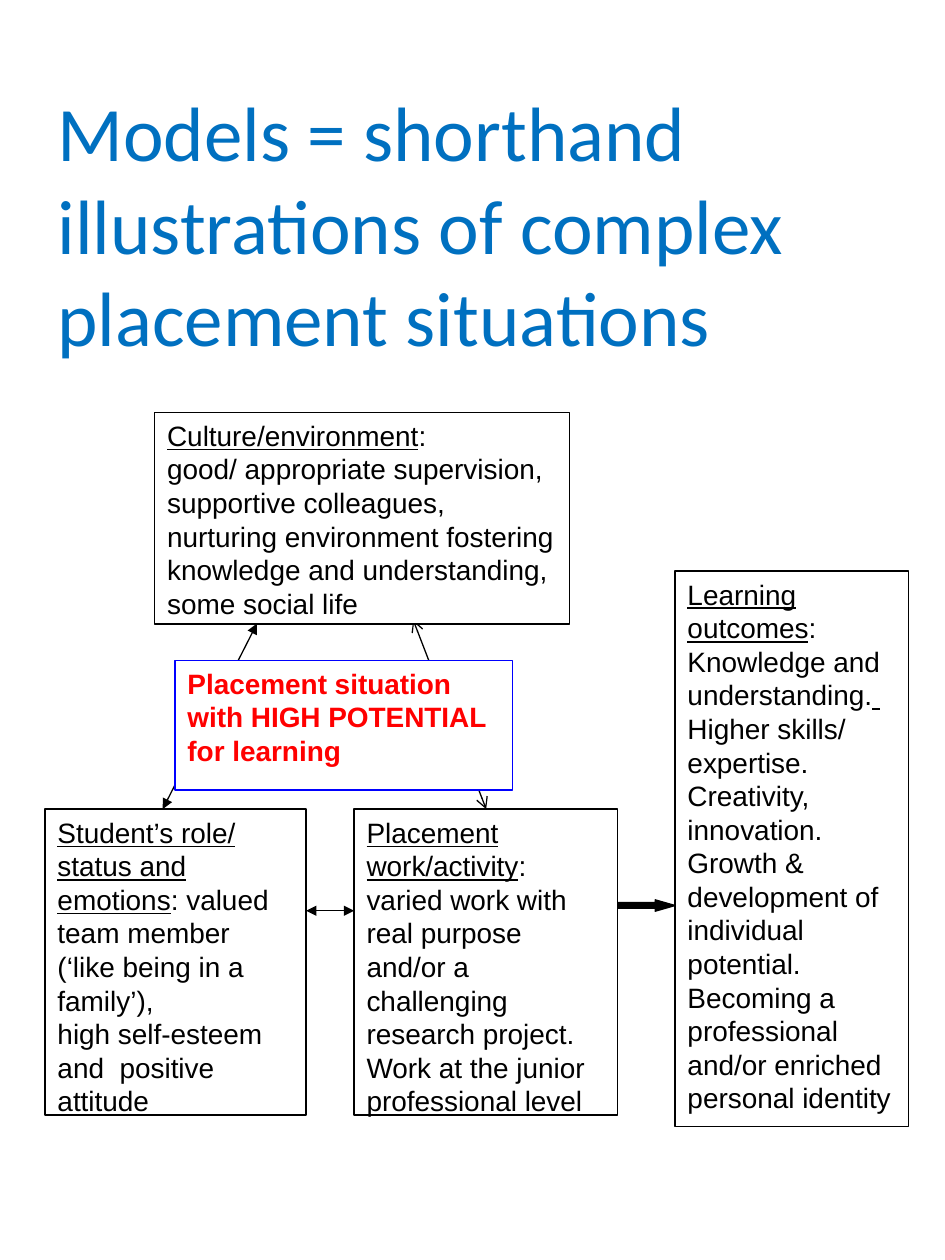
from pptx import Presentation
from pptx.dml.color import RGBColor
from pptx.enum.shapes import MSO_CONNECTOR, MSO_SHAPE
from pptx.enum.text import MSO_ANCHOR, PP_ALIGN
from pptx.oxml.ns import qn
from pptx.util import Cm, Pt
from lxml.etree import SubElement

BLACK = RGBColor(0x00, 0x00, 0x00)
WHITE = RGBColor(0xFF, 0xFF, 0xFF)
RED = RGBColor(0xFF, 0x00, 0x00)
BLUE = RGBColor(0x00, 0x00, 0xFF)
TITLE_BLUE = RGBColor(0x00, 0x70, 0xC0)


class Diagram:
    font = "Arial"
    size = Pt(16)
    line_width = Pt(0.75)

    def __init__(self, slide):
        self.slide = slide

    def run(self, p, text, font, size, color, bold=False, underline=False):
        for i, part in enumerate(text.split("\n")):
            if i:
                p.add_line_break()
            r = p.add_run()
            r.text = part
            r.font.name = font
            r.font.size = size
            r.font.color.rgb = color
            r.font.bold = bold
            r.font.underline = underline

    def title(self, x, y, w, h, text):
        tf = self.slide.shapes.add_textbox(Cm(x), Cm(y), Cm(w), Cm(h)).text_frame
        tf.word_wrap = True
        tf.vertical_anchor = MSO_ANCHOR.MIDDLE
        self.run(tf.paragraphs[0], text, "Calibri", Pt(44), TITLE_BLUE)

    def shape(self, kind, x, y, w, h, fill, line):
        sp = self.slide.shapes.add_shape(kind, Cm(x), Cm(y), Cm(w), Cm(h))
        sp.shadow.inherit = False
        sp.fill.solid()
        sp.fill.fore_color.rgb = fill
        sp.line.color.rgb = line
        sp.line.width = self.line_width
        return sp

    def box(self, x, y, w, h, paragraphs, line=BLACK, color=BLACK, bold=False):
        sp = self.shape(MSO_SHAPE.RECTANGLE, x, y, w, h, WHITE, line)
        tf = sp.text_frame
        tf.word_wrap = True
        tf.vertical_anchor = MSO_ANCHOR.TOP
        for i, runs in enumerate(paragraphs):
            p = tf.add_paragraph() if i else tf.paragraphs[0]
            p.alignment = PP_ALIGN.LEFT
            for text, underline in runs:
                self.run(p, text, self.font, self.size, color, bold, underline)

    def block_arrow(self, x, y, w, h):
        sp = self.shape(MSO_SHAPE.RIGHT_ARROW, x, y, w, h, BLACK, BLACK)
        sp.adjustments[0] = 0.5
        sp.adjustments[1] = 1.74

    def double_arrow(self, x1, y1, x2, y2, head="triangle"):
        c = self.slide.shapes.add_connector(
            MSO_CONNECTOR.STRAIGHT, Cm(x1), Cm(y1), Cm(x2), Cm(y2))
        c.line.color.rgb = BLACK
        c.line.width = self.line_width
        ln = c.line._get_or_add_ln()
        for end in ("a:headEnd", "a:tailEnd"):
            SubElement(ln, qn(end), type=head)
        SubElement(c._element.spPr, qn("a:effectLst"))


def main():
    prs = Presentation()
    prs.slide_width = Cm(19.05)
    prs.slide_height = Cm(25.4)
    s = prs.slides.add_slide(prs.slide_layouts[6])
    d = Diagram(s)

    low_top, low_height = 16.31, 6.17
    student_left, student_width = 0.91, 5.26
    work_left, work_width = 7.14, 5.31
    outcomes_left = 13.61
    student_right = student_left + student_width
    work_right = work_left + work_width

    d.double_arrow(8.33, 12.5, 9.8, low_top, "arrow")
    d.title(0.91, 1.9, 17.15, 5.21,
            "Models = shorthand illustrations of complex placement situations")
    d.block_arrow(work_right, 18.14, outcomes_left - work_right, 0.23)
    d.box(student_left, low_top, student_width, low_height, [
        [("Student’s role/ status and emotions", True),
         (": valued team member (‘like being in a family’),", False)],
        [("high self-esteem and  positive attitude", False)],
    ])
    d.box(work_left, low_top, work_width, low_height, [
        [("Placement work/activity", True),
         (": varied work with real purpose and/or a challenging research "
          "project. Work at the junior professional level", False)],
    ])
    d.box(outcomes_left, 11.51, 4.7, 11.2, [
        [("Learning outcomes", True), (":", False)],
        [("Knowledge and understanding.", False), (" ", True)],
        [("Higher skills/ expertise.\nCreativity, innovation.\n"
          "Growth & development of individual potential.\n"
          "Becoming a professional and/or enriched personal identity", False)],
    ])
    d.double_arrow(5.18, 12.57, 3.28, low_top)
    d.box(3.53, 13.31, 6.81, 2.62, [
        [("Placement situation with HIGH POTENTIAL for learning", False)],
    ], line=BLUE, color=RED, bold=True)
    d.double_arrow(student_right, 18.36, work_left, 18.36)
    d.box(3.12, 8.31, 8.36, 4.27, [
        [("Culture/environment", True), (":", False)],
        [("good/ appropriate supervision, supportive colleagues, nurturing "
          "environment fostering knowledge and understanding, some social life",
          False)],
    ])
    prs.save("out.pptx")


if __name__ == "__main__":
    main()
